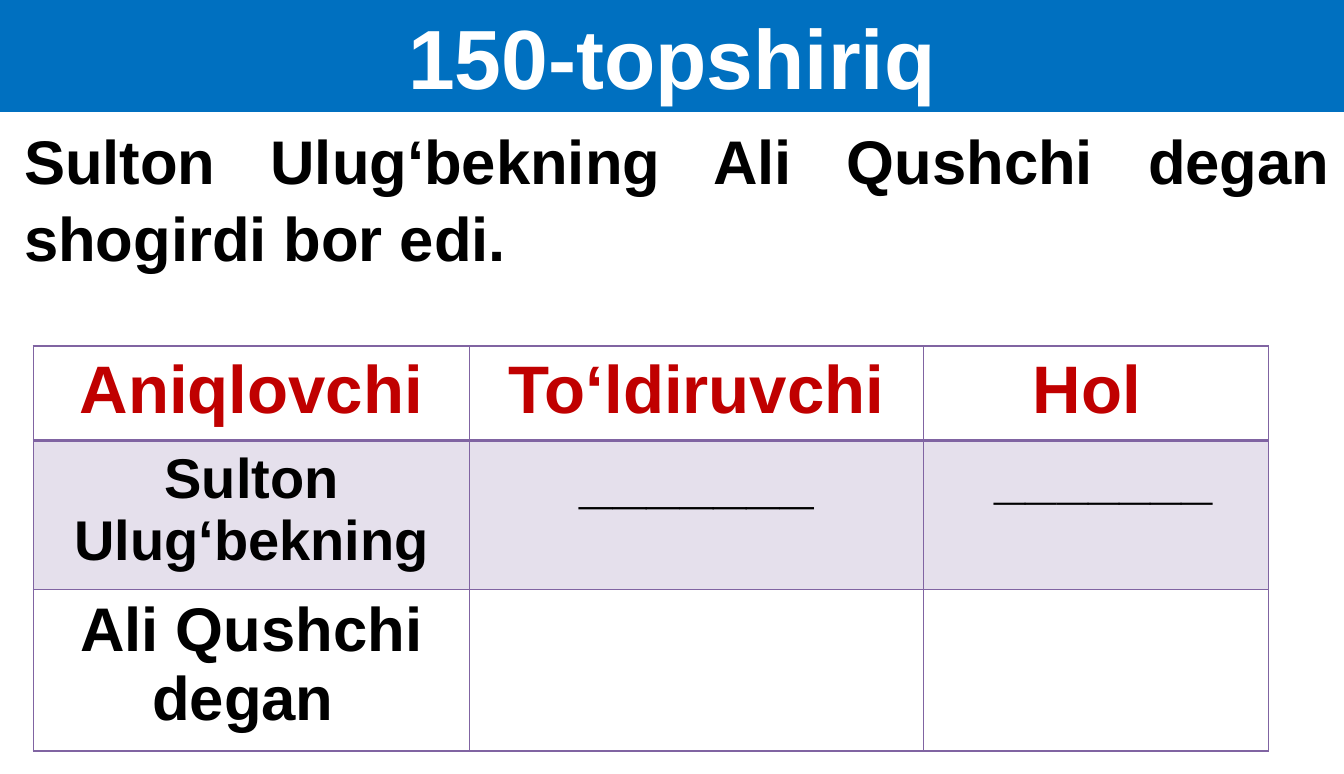
"""Build a grammar exercise slide with a heading band, a sentence and an answer table."""
from dataclasses import dataclass

import lxml.etree
import pptx
import pptx.dml.color
import pptx.enum.text
import pptx.oxml.ns
import pptx.util

Align = pptx.enum.text.PP_ALIGN
Anchor = pptx.enum.text.MSO_ANCHOR
qn = pptx.oxml.ns.qn


@dataclass(frozen=True)
class Theme:
    font: str = "Arial"
    white: str = "FFFFFF"
    black: str = "000000"
    blue: str = "0070C0"
    red: str = "C00000"
    purple: str = "8064A2"
    band_alpha: int = 20
    title: int = 60
    header: int = 48
    body: int = 44
    blank: int = 43
    answer: int = 40
    thin: int = 1
    thick: int = 2


@dataclass(frozen=True)
class Box:
    left: float
    top: float
    width: float
    height: float


@dataclass(frozen=True)
class Entry:
    text: str
    size: int
    color: str


THEME = Theme()
SLIDE_W = pptx.util.Inches(13.33)
SLIDE_H = pptx.util.Inches(7.68)

HEADING = Box(0, 0, 100, 14.45)
SENTENCE = Box(1.05, 14.45, 98.8, 20.57)
TABLE_LEFT, TABLE_TOP = 2.48, 44.7
COLUMNS = (32.48, 33.76, 25.66)
ROWS = (12.24, 19.1, 20.9)

ENTRIES = (
    tuple(Entry(t, THEME.header, THEME.red) for t in ("Aniqlovchi", "To‘ldiruvchi", "Hol ")),
    (
        Entry("Sulton Ulug‘bekning", THEME.answer, THEME.black),
        Entry("_______", THEME.blank, THEME.black),
        Entry(" _______", THEME.answer, THEME.black),
    ),
    (Entry("Ali Qushchi degan ", THEME.body, THEME.black),),
)


def across(share: float) -> int:
    """Turn a percentage of the slide width into a length."""
    return round(SLIDE_W * share / 100)


def down(share: float) -> int:
    """Turn a percentage of the slide height into a length."""
    return round(SLIDE_H * share / 100)


def place(box: Box) -> tuple[int, int, int, int]:
    """Give the position and size of a box as lengths."""
    return across(box.left), down(box.top), across(box.width), down(box.height)


def rgb(color: str) -> pptx.dml.color.RGBColor:
    """Turn a hex string into a colour."""
    return pptx.dml.color.RGBColor.from_string(color)


def write(tf, entry: Entry, align: Align) -> None:
    """Write one bold paragraph into a text frame."""
    tf.word_wrap = True
    p = tf.paragraphs[0]
    p.text = entry.text
    p.alignment = align
    for r in p.runs:
        r.font.name = THEME.font
        r.font.size = pptx.util.Pt(entry.size)
        r.font.bold = True
        r.font.color.rgb = rgb(entry.color)


def add_heading(slide) -> None:
    """Turn the title placeholder into the coloured heading band."""
    sp = slide.shapes.title
    sp.left, sp.top, sp.width, sp.height = place(HEADING)
    sp.fill.solid()
    sp.fill.fore_color.rgb = rgb(THEME.blue)
    tf = sp.text_frame
    write(tf, Entry("150-topshiriq", THEME.title, THEME.white), Align.CENTER)
    tf.vertical_anchor = Anchor.MIDDLE
    tf.auto_size = pptx.enum.text.MSO_AUTO_SIZE.NONE
    tf.paragraphs[0].line_spacing = 1.0


def add_sentence(slide) -> None:
    """Add the sentence to be analysed."""
    tf = slide.shapes.add_textbox(*place(SENTENCE)).text_frame
    text = "Sulton Ulug‘bekning Ali Qushchi degan shogirdi bor edi."
    write(tf, Entry(text, THEME.body, THEME.black), Align.JUSTIFY)
    tf.margin_top = pptx.util.Inches(0.08)
    tf.paragraphs[0].line_spacing = 1.04


def add_color(parent, color: str):
    """Append a solid fill element and return its colour element."""
    fill = lxml.etree.SubElement(parent, qn("a:solidFill"))
    return lxml.etree.SubElement(fill, qn("a:srgbClr"), val=color)


def set_borders(cell, top: int, bottom: int) -> None:
    """Draw the four borders of a cell."""
    tc_pr = cell._tc.get_or_add_tcPr()
    widths = {"a:lnL": THEME.thin, "a:lnR": THEME.thin, "a:lnT": top, "a:lnB": bottom}
    for tag, width in widths.items():
        ln = lxml.etree.SubElement(tc_pr, qn(tag), w=str(pptx.util.Pt(width)))
        add_color(ln, THEME.purple)


def set_fill(cell, banded: bool) -> None:
    """Tint a banded cell and leave any other cell clear."""
    if banded:
        color = add_color(cell._tc.get_or_add_tcPr(), THEME.purple)
        lxml.etree.SubElement(color, qn("a:alpha"), val=str(THEME.band_alpha * 1000))
    else:
        cell.fill.background()


def add_answers(slide) -> None:
    """Add the table of sentence parts."""
    box = Box(TABLE_LEFT, TABLE_TOP, sum(COLUMNS), sum(ROWS))
    table = slide.shapes.add_table(len(ROWS), len(COLUMNS), *place(box)).table
    table.first_row = table.horz_banding = False
    for column, share in zip(table.columns, COLUMNS):
        column.width = across(share)
    for row, share in zip(table.rows, ROWS):
        row.height = down(share)
    for i, row in enumerate(table.rows):
        for cell in row.cells:
            cell.margin_left = cell.margin_right = pptx.util.Inches(0.13)
            cell.margin_top = cell.margin_bottom = pptx.util.Inches(0.07)
            set_borders(
                cell,
                THEME.thick if i == 1 else THEME.thin,
                THEME.thick if i == 0 else THEME.thin,
            )
            set_fill(cell, i == 1)
        for cell, entry in zip(row.cells, ENTRIES[i]):
            write(cell.text_frame, entry, Align.CENTER)


def main() -> None:
    """Build and save the slide."""
    prs = pptx.Presentation()
    prs.slide_width, prs.slide_height = SLIDE_W, SLIDE_H
    slide = prs.slides.add_slide(prs.slide_layouts[5])
    add_heading(slide)
    add_sentence(slide)
    add_answers(slide)
    prs.save("out.pptx")


if __name__ == "__main__":
    main()
